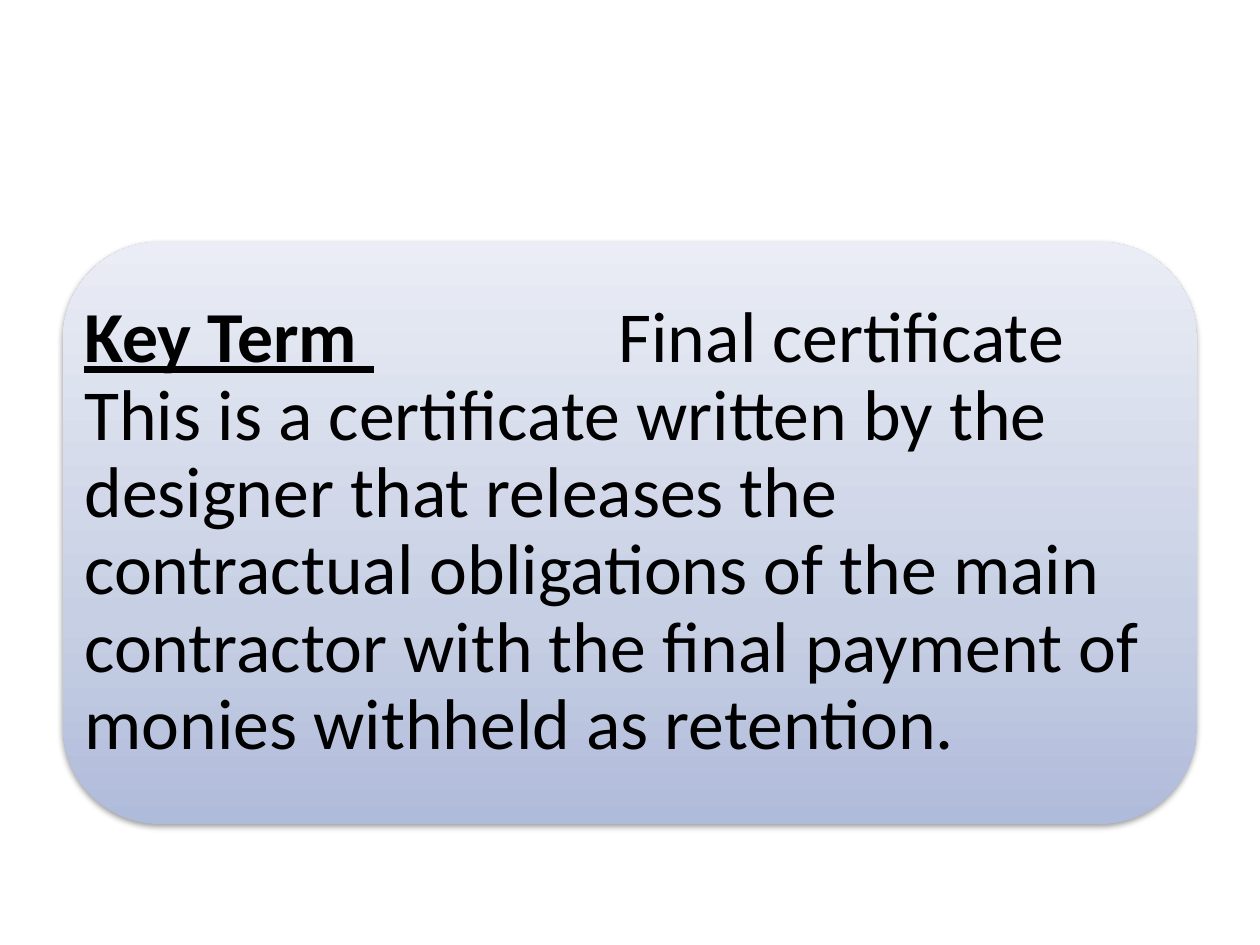
"""Build a key term slide defining the final certificate."""
import copy
import pptx
import pptx.dml.color
import pptx.enum.shapes
import pptx.enum.text
import pptx.oxml
import pptx.oxml.ns
import pptx.util

TERM = "Key Term "
DEFINITION = (
    "\tFinal certificate This is a certificate written by the designer that "
    "releases the contractual obligations of the main contractor with the "
    "final payment of monies withheld as retention."
)
RUNS = [
    (TERM, {"bold": True, "underline": True}),
    (DEFINITION, {"bold": False, "underline": False}),
]
TEXT_FORMAT = {"name": "Calibri", "size": pptx.util.Pt(41)}
GRADIENT = [(0, "AFBBDA"), (0.35, "C7CFE4"), (1, "EAEDF5")]
WIDTH, HEIGHT = pptx.util.Inches(10), pptx.util.Inches(7.5)
PANEL_SHARES = (0.05, 0.256, 0.9, 0.616)
INSET = pptx.util.Inches(0.17)
TAB_STOP = pptx.util.Inches(4.24)
NAMESPACE = pptx.oxml.ns.nsdecls("a")
SHADOW = (
    f'<a:outerShdw {NAMESPACE} blurRad="40000" dist="20000" dir="5400000" '
    'rotWithShape="0"><a:srgbClr val="000000"><a:alpha val="38000"/>'
    "</a:srgbClr></a:outerShdw>"
)
TABS = f'<a:tabLst {NAMESPACE}><a:tab pos="{TAB_STOP}" algn="l"/></a:tabLst>'


def colour(value):
    """Turn a hex string into a colour."""
    return pptx.dml.color.RGBColor.from_string(value)


def apply(target, values):
    """Set each attribute of the target from a dict."""
    for name, value in values.items():
        setattr(target, name, value)


def add_panel(slide, area):
    """Add the rounded panel with its gradient and soft shadow."""
    panel = slide.shapes.add_shape(
        pptx.enum.shapes.MSO_SHAPE.ROUNDED_RECTANGLE, *area
    )
    panel.fill.gradient()
    panel.fill.gradient_angle = 90
    properties = panel._element.spPr
    stops = properties.find(".//" + pptx.oxml.ns.qn("a:gsLst"))
    stops.append(copy.deepcopy(stops[-1]))
    for stop, (position, value) in zip(panel.fill.gradient_stops, GRADIENT):
        stop.position = position
        stop.color.rgb = colour(value)
    panel.line.fill.background()
    panel.shadow.inherit = False
    effects = properties.find(pptx.oxml.ns.qn("a:effectLst"))
    effects.append(pptx.oxml.parse_xml(SHADOW))


def add_definition(slide, area):
    """Add the term and its definition over the panel."""
    frame = slide.shapes.add_textbox(*area).text_frame
    sides = ("left", "top", "right", "bottom")
    apply(frame, {f"margin_{side}": INSET for side in sides})
    apply(frame, {
        "word_wrap": True,
        "vertical_anchor": pptx.enum.text.MSO_ANCHOR.MIDDLE,
    })
    paragraph = frame.paragraphs[0]
    paragraph.line_spacing = 0.9
    paragraph._p.get_or_add_pPr().append(pptx.oxml.parse_xml(TABS))
    for wording, emphasis in RUNS:
        run = paragraph.add_run()
        run.text = wording
        apply(run.font, TEXT_FORMAT | emphasis)
        run.font.color.rgb = colour("000000")


def main():
    """Compose and save the slide."""
    deck = pptx.Presentation()
    apply(deck, {"slide_width": WIDTH, "slide_height": HEIGHT})
    slide = deck.slides.add_slide(deck.slide_layouts[6])
    extents = (WIDTH, HEIGHT, WIDTH, HEIGHT)
    area = [round(share * size) for share, size in zip(PANEL_SHARES, extents)]
    add_panel(slide, area)
    add_definition(slide, area)
    deck.save("out.pptx")


if __name__ == "__main__":
    main()
